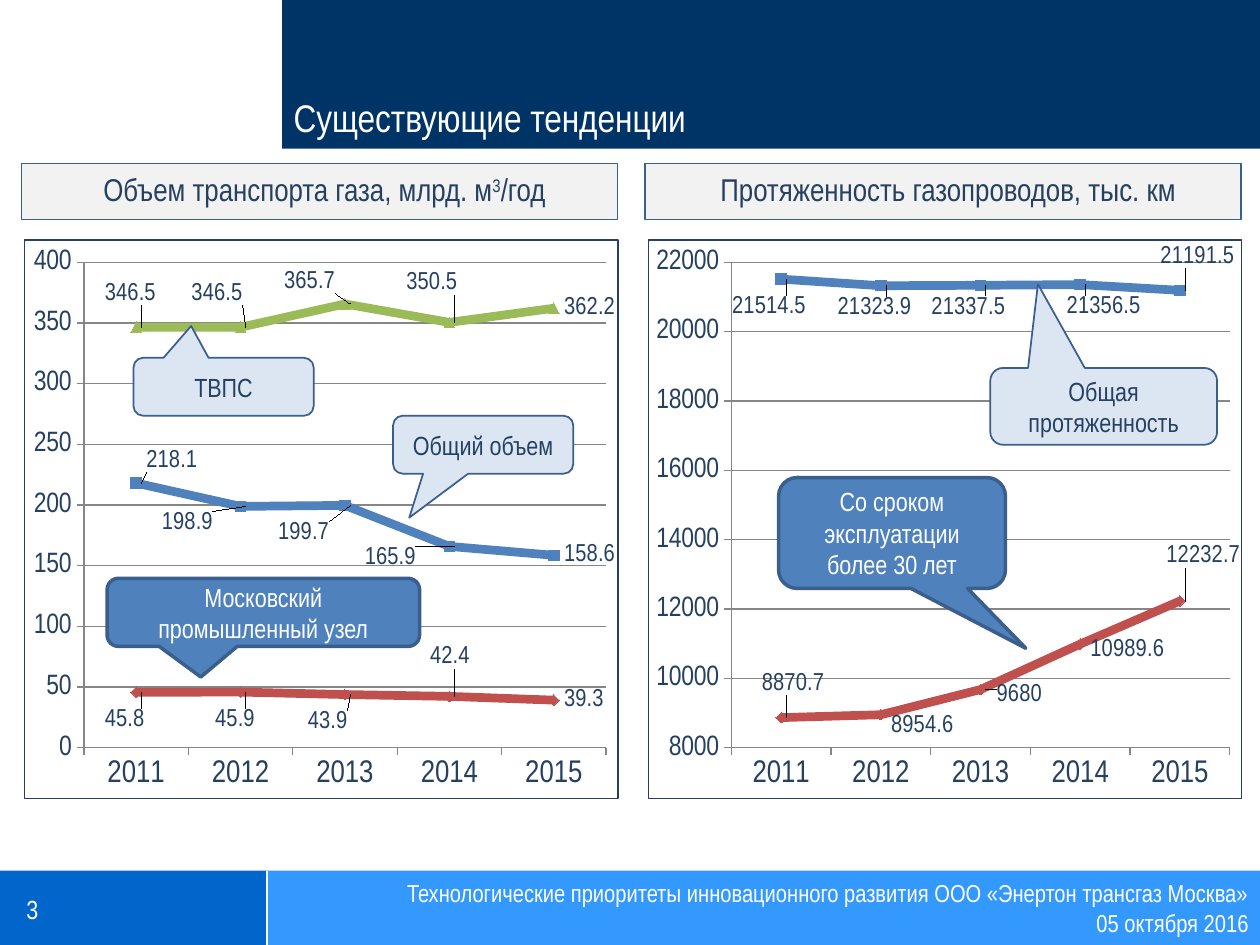
from lxml import etree
from pptx import Presentation
from pptx.chart.data import CategoryChartData
from pptx.dml.color import RGBColor
from pptx.enum.chart import XL_CHART_TYPE, XL_LABEL_POSITION, XL_MARKER_STYLE, XL_TICK_MARK
from pptx.enum.shapes import MSO_CONNECTOR, MSO_SHAPE
from pptx.enum.text import MSO_ANCHOR, PP_ALIGN
from pptx.oxml import parse_xml
from pptx.oxml.ns import nsdecls, qn
from pptx.util import Inches, Pt

WHITE = RGBColor(0xFF, 0xFF, 0xFF)
NAVY = RGBColor(0x00, 0x33, 0x66)
ROYAL = RGBColor(0x00, 0x66, 0xCC)
SKY = RGBColor(0x33, 0x99, 0xFF)
INK = RGBColor(0x25, 0x40, 0x61)
PALE_GRAY = RGBColor(0xF2, 0xF2, 0xF2)
GRID_GRAY = RGBColor(0x86, 0x86, 0x86)
HEADING_EDGE = RGBColor(0x37, 0x60, 0x92)
CALLOUT_EDGE = RGBColor(0x3A, 0x5F, 0x8C)
PALE_BLUE = RGBColor(0xDC, 0xE6, 0xF2)
BLUE = RGBColor(0x4F, 0x81, 0xBD)
RED = RGBColor(0xC0, 0x50, 0x4D)
GREEN = RGBColor(0x9B, 0xBB, 0x59)

FONT = "Arial Narrow"
YEARS = ["2011", "2012", "2013", "2014", "2015"]


def write(shape, *paragraphs, size=15, color=WHITE, align=PP_ALIGN.LEFT,
          anchor=MSO_ANCHOR.TOP, insets=(0.1, 0.05, 0.1, 0.05), spacing=None):
    frame = shape.text_frame
    frame.word_wrap = True
    frame.vertical_anchor = anchor
    (frame.margin_left, frame.margin_top,
     frame.margin_right, frame.margin_bottom) = map(Inches, insets)
    for index, text in enumerate(paragraphs):
        paragraph = frame.add_paragraph() if index else frame.paragraphs[0]
        paragraph.alignment = align
        paragraph.line_spacing = spacing
        for part_index, part in enumerate(text.split("^")):
            run = paragraph.add_run()
            run.text = part
            run.font.name = FONT
            run.font.size = Pt(size)
            run.font.color.rgb = color
            if part_index % 2:
                run.font._element.set("baseline", "30000")


def add_panel(slide, box, fill, edge=None, width=0.75, preset=MSO_SHAPE.RECTANGLE):
    panel = slide.shapes.add_shape(preset, *map(Inches, box))
    panel.shadow.inherit = False
    panel.fill.solid()
    panel.fill.fore_color.rgb = fill
    if edge is None:
        panel.line.fill.background()
    else:
        panel.line.color.rgb = edge
        panel.line.width = Pt(width)
    return panel


def add_header(slide, box, title):
    add_panel(slide, box, NAVY)
    left, top, width, height = box
    title_box = slide.shapes.add_textbox(*map(Inches, (left, top - 0.03, width, height)))
    write(title_box, title, size=22, anchor=MSO_ANCHOR.BOTTOM, insets=(0.09, 0.04, 0.09, 0.04))


def add_footer(slide, box, number, *lines):
    left, top, width, height = box
    split = left + 2.12
    add_panel(slide, (left, top, split - left, height), ROYAL)
    add_panel(slide, (split, top, left + width - split, height), SKY)
    divider = slide.shapes.add_connector(
        MSO_CONNECTOR.STRAIGHT, Inches(split), Inches(top), Inches(split), Inches(top + height))
    divider.line.color.rgb = WHITE
    divider.line.width = Pt(1.25)
    etree.SubElement(divider._element.spPr, qn("a:effectLst"))
    number_box = slide.shapes.add_textbox(*map(Inches, (left + 0.12, top + 0.14, 2.12, 0.34)))
    write(number_box, number, insets=(0.09, 0.04, 0.09, 0.04))
    event_box = slide.shapes.add_textbox(
        *map(Inches, (split + 0.23, top + 0.06, left + width - split - 0.23, 0.47)))
    write(event_box, *lines, size=14, align=PP_ALIGN.RIGHT, insets=(0.09, 0, 0.09, 0))


def manual_layout(x, y, width=None, height=None):
    inner = width is not None
    fields = [("layoutTarget", "inner"), ("xMode", "edge"), ("yMode", "edge")] if inner else []
    fields += [("x", x), ("y", y)]
    fields += [("w", width), ("h", height)] if inner else []
    body = "".join(f'<c:{tag} val="{value}"/>' for tag, value in fields)
    return parse_xml(f'<c:layout {nsdecls("c")}><c:manualLayout>{body}</c:manualLayout></c:layout>')


def set_font(font, size):
    font.name = FONT
    font.size = Pt(size)
    font.color.rgb = INK


def style_series(series, color, marker, label_offsets):
    series.smooth = False
    series.format.line.color.rgb = color
    series.format.line.width = Pt(5)
    series.marker.style = marker
    series.marker.size = 6
    series.marker.format.fill.solid()
    series.marker.format.fill.fore_color.rgb = color
    series.marker.format.line.color.rgb = color
    for index, offset in enumerate(label_offsets):
        label = series.points[index].data_label
        set_font(label.font, 14)
        label.position = XL_LABEL_POSITION.RIGHT
        series.data_labels._element.findall(qn("c:dLbl"))[index].insert(1, manual_layout(*offset))


def add_trend(slide, box, heading, lines, scale, plot):
    left, top, width, height = box
    heading_panel = add_panel(slide, (left - 0.02, top, 4.73, 0.44), PALE_GRAY, HEADING_EDGE)
    write(heading_panel, heading, size=18, color=INK, align=PP_ALIGN.CENTER,
          anchor=MSO_ANCHOR.MIDDLE, insets=(0.12, 0.04, 0.04, 0.04), spacing=0.9)

    data = CategoryChartData()
    data.categories = YEARS
    for index, (values, *_) in enumerate(lines, 1):
        data.add_series(f"Series {index}", values)
    chart = slide.shapes.add_chart(
        XL_CHART_TYPE.LINE_MARKERS, *map(Inches, (left, top + 0.6, width, height - 0.6)), data).chart
    chart.has_legend = False
    chart.has_title = False
    set_font(chart.font, 18)
    chart.plots[0].vary_by_categories = False
    for series, (_, *style) in zip(chart.plots[0].series, lines):
        style_series(series, *style)

    values_axis, years_axis = chart.value_axis, chart.category_axis
    values_axis.minimum_scale, values_axis.maximum_scale, values_axis.major_unit = scale
    values_axis.has_major_gridlines = True
    values_axis.major_gridlines.format.line.color.rgb = GRID_GRAY
    for axis, size in ((values_axis, 16), (years_axis, 18)):
        set_font(axis.tick_labels.font, size)
        axis.major_tick_mark = XL_TICK_MARK.OUTSIDE
        axis.format.line.color.rgb = GRID_GRAY

    space = chart._chartSpace
    area = space.find(".//" + qn("c:plotArea"))
    for automatic in area.findall(qn("c:layout")):
        area.remove(automatic)
    area.insert(0, manual_layout(*plot))
    space.find(qn("c:txPr")).addprevious(parse_xml(
        f'<c:spPr {nsdecls("c", "a")}><a:noFill/><a:ln w="{Pt(0.75)}"><a:solidFill>'
        f'<a:srgbClr val="{INK}"/></a:solidFill></a:ln></c:spPr>'))


def add_callout(slide, box, text, pointer, strong=False):
    fill, color, width = (BLUE, WHITE, 2) if strong else (PALE_BLUE, INK, 1)
    callout = add_panel(slide, box, fill, CALLOUT_EDGE, width, MSO_SHAPE.ROUNDED_RECTANGULAR_CALLOUT)
    callout.adjustments[0], callout.adjustments[1] = pointer
    write(callout, text, color=color, align=PP_ALIGN.CENTER, anchor=MSO_ANCHOR.MIDDLE)


def main():
    deck = Presentation()
    deck.slide_width, deck.slide_height = Inches(10), Inches(7.5)
    slide = deck.slides.add_slide(deck.slide_layouts[6])

    add_footer(slide, (0, 6.91, 10, 0.59), "3",
               "Технологические приоритеты инновационного развития ООО «Энертон трансгаз Москва»",
               "05 октября 2016")
    add_header(slide, (2.24, 0, 7.76, 1.18), "Существующие тенденции")

    square, diamond, triangle = (
        XL_MARKER_STYLE.SQUARE, XL_MARKER_STYLE.DIAMOND, XL_MARKER_STYLE.TRIANGLE)
    volumes = [
        ((218.1, 198.9, 199.7, 165.9, 158.6), BLUE, square,
         [(0, -0.04), (-0.15, 0.03), (-0.13, 0.05), (-0.16, 0.02), (0, 0)]),
        ((45.8, 45.9, 43.9, 42.4, 39.3), RED, diamond,
         [(-0.07, 0.05), (-0.06, 0.05), (-0.08, 0.05), (-0.05, -0.07), (0, 0)]),
        ((346.5, 346.5, 365.7, 350.5, 362.2), GREEN, triangle,
         [(-0.07, -0.06), (-0.1, -0.06), (-0.12, -0.04), (-0.09, -0.07), (0, 0)]),
    ]
    lengths = [
        ((21514.5, 21323.9, 21337.5, 21356.5, 21191.5), BLUE, square,
         [(-0.1, 0.05), (-0.09, 0.04), (-0.1, 0.04), (-0.04, 0.04), (-0.05, -0.06)]),
        ((8870.7, 8954.6, 9680, 10989.6, 12232.7), RED, diamond,
         [(-0.05, -0.06), (0, 0.02), (0.01, 0.01), (0, 0.01), (-0.04, -0.08)]),
    ]
    add_trend(slide, (0.19, 1.3, 4.72, 5.04), "Объем транспорта газа, млрд. м^3^/год",
              volumes, (0, 400, 50), (0.1, 0.04, 0.88, 0.87))
    add_trend(slide, (5.14, 1.3, 4.72, 5.04), "Протяженность газопроводов, тыс. км",
              lengths, (8000, 22000, 2000), (0.14, 0.04, 0.84, 0.87))

    add_callout(slide, (6.18, 3.79, 1.8, 0.88), "Со сроком эксплуатации более 30 лет",
                (0.59, 1.04), strong=True)
    add_callout(slide, (7.86, 2.92, 1.8, 0.61), "Общая протяженность", (-0.29, -1.59))
    add_callout(slide, (3.12, 3.3, 1.43, 0.46), "Общий объем", (-0.41, 1.26))
    add_callout(slide, (0.85, 4.59, 2.48, 0.54), "Московский промышленный узел",
                (-0.2, 0.95), strong=True)
    add_callout(slide, (1.06, 2.84, 1.43, 0.46), "ТВПС", (-0.18, -1.05))
    deck.save("out.pptx")


if __name__ == "__main__":
    main()
